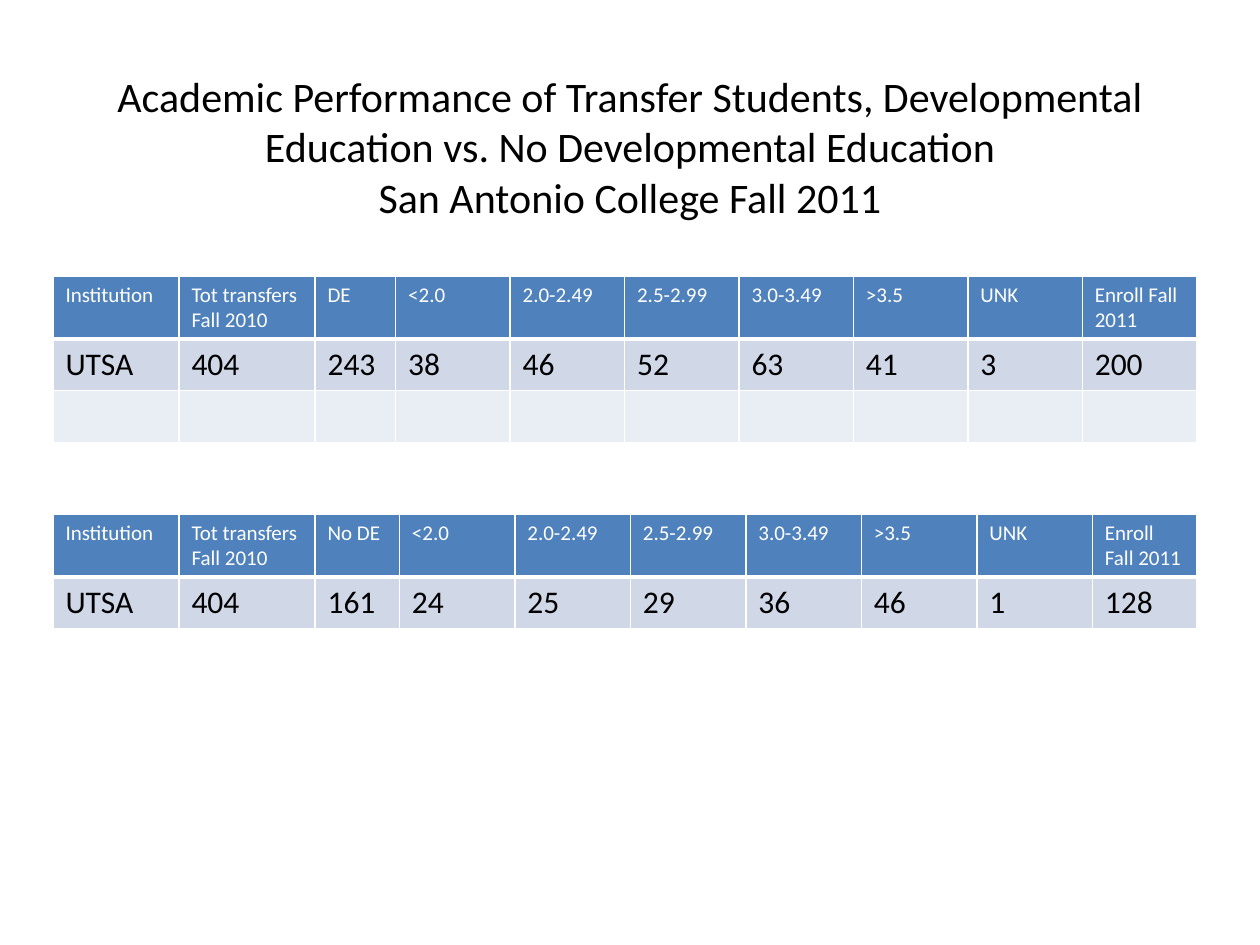
from lxml import etree
from pptx import Presentation
from pptx.dml.color import RGBColor
from pptx.enum.text import MSO_ANCHOR, PP_ALIGN
from pptx.oxml.ns import qn
from pptx.util import Inches, Pt

FONT = "Calibri"
BLACK = RGBColor(0x00, 0x00, 0x00)
WHITE = RGBColor(0xFF, 0xFF, 0xFF)
HEADER_BLUE = RGBColor(0x4F, 0x81, 0xBD)
BAND_FILLS = [RGBColor(0xD0, 0xD8, 0xE8), RGBColor(0xE9, 0xED, 0xF4)]

TITLE_LINES = [
    "Academic Performance of Transfer Students, Developmental "
    "Education vs. No Developmental Education",
    "San Antonio College Fall 2011",
]
GPA_BANDS = ["<2.0", "2.0-2.49", "2.5-2.99", "3.0-3.49", ">3.5", "UNK"]

TABLE_LEFT, TABLE_WIDTH = 0.42, 9.08
HEADER_HEIGHT, ROW_HEIGHT = 0.5, 0.41
INSTITUTION_WIDTH, TRANSFERS_WIDTH = 1, 1.08


def add_run(p, text, size, color):
    r = p.add_run()
    r.text = text
    r.font.name = FONT
    r.font.size = Pt(size)
    r.font.color.rgb = color


def add_title(s):
    box = s.shapes.add_textbox(Inches(0.5), Inches(0.3), Inches(9), Inches(1.25))
    tf = box.text_frame
    tf.word_wrap = True
    tf.vertical_anchor = MSO_ANCHOR.TOP
    tf.margin_top = Inches(0.26)
    p = tf.paragraphs[0]
    p.alignment = PP_ALIGN.CENTER
    for i, line in enumerate(TITLE_LINES):
        if i:
            p.add_line_break()
        add_run(p, line, 24, BLACK)


def set_borders(cell, bottom):
    """Draw white cell borders, 1 pt except for the given bottom width."""
    tc_pr = cell._tc.get_or_add_tcPr()
    widths = {"a:lnL": 1, "a:lnR": 1, "a:lnT": 1, "a:lnB": bottom}
    for i, (tag, width) in enumerate(widths.items()):
        ln = etree.Element(qn(tag), w=str(Pt(width)))
        fill = etree.SubElement(ln, qn("a:solidFill"))
        etree.SubElement(fill, qn("a:srgbClr"), val=str(WHITE))
        tc_pr.insert(i, ln)


def fill_cell(cell, text, size, color, fill, bottom):
    cell.fill.solid()
    cell.fill.fore_color.rgb = fill
    set_borders(cell, bottom)
    if text:
        add_run(cell.text_frame.paragraphs[0], text, size, color)


def add_grade_table(s, top, group, rows, widths):
    """Add a table of grade bands for one student group."""
    header = ["Institution", "Tot transfers Fall 2010", group, *GPA_BANDS,
              "Enroll Fall 2011"]
    height = HEADER_HEIGHT + ROW_HEIGHT * len(rows)
    table = s.shapes.add_table(
        len(rows) + 1, len(header), Inches(TABLE_LEFT), Inches(top),
        Inches(TABLE_WIDTH), Inches(height)).table
    for col, width in zip(table.columns, widths):
        col.width = Inches(width)
    for i, row in enumerate(table.rows):
        row.height = Inches(ROW_HEIGHT if i else HEADER_HEIGHT)
    for cell, text in zip(table.rows[0].cells, header):
        fill_cell(cell, text, 12, WHITE, HEADER_BLUE, 3)
    for i, values in enumerate(rows):
        for cell, text in zip(table.rows[i + 1].cells, values):
            fill_cell(cell, text, 18, BLACK, BAND_FILLS[i % 2], 1)


def column_widths(group_width, enroll_width=None):
    """Share the remaining width equally; enrolment may have its own width."""
    fixed = [INSTITUTION_WIDTH, TRANSFERS_WIDTH, group_width]
    last = [enroll_width] if enroll_width else []
    count = len(GPA_BANDS) + 1 - len(last)
    band = (TABLE_WIDTH - sum(fixed + last)) / count
    return fixed + [band] * count + last


def main():
    prs = Presentation()
    prs.slide_width, prs.slide_height = Inches(10), Inches(7.5)
    s = prs.slides.add_slide(prs.slide_layouts[6])
    add_title(s)
    de_row = ["UTSA", "404", "243", "38", "46", "52", "63", "41", "3", "200"]
    no_de_row = ["UTSA", "404", "161", "24", "25", "29", "36", "46", "1", "128"]
    add_grade_table(s, 2.19, "DE", [de_row, [""] * len(de_row)],
                    column_widths(0.64))
    add_grade_table(s, 4.08, "No DE", [no_de_row], column_widths(0.67, 0.83))
    prs.save("out.pptx")


if __name__ == "__main__":
    main()
